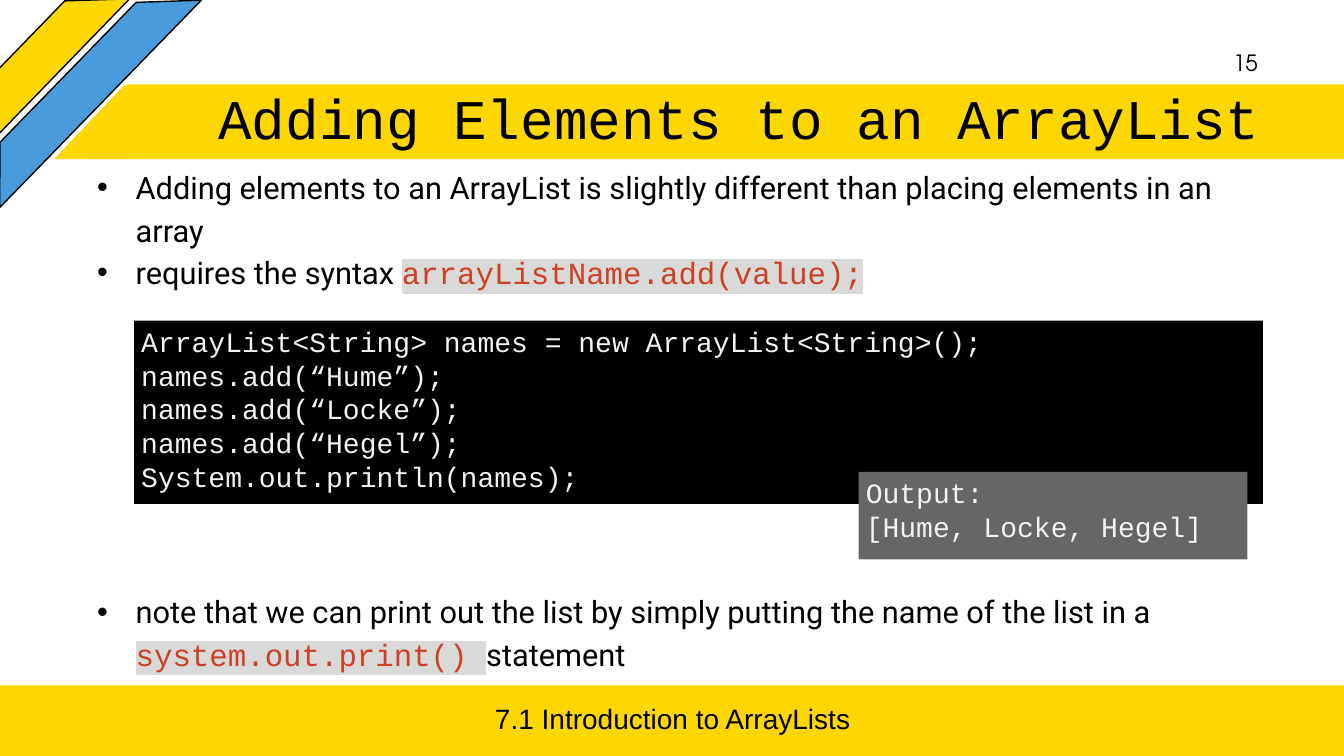
from lxml.etree import SubElement
from pptx import Presentation
from pptx.dml.color import RGBColor
from pptx.enum.shapes import MSO_SHAPE as Preset
from pptx.enum.text import MSO_ANCHOR as Anchor, MSO_AUTO_SIZE as AutoSize, PP_ALIGN as Align
from pptx.oxml.ns import qn
from pptx.util import Cm, Pt

BLACK, WHITE_TEXT = "000000", "F3F3F3"
YELLOW, BLUE = "FFD700", "4A9BDC"
CODE_RED, CODE_BACK, OUTPUT_GREY = "CC4125", "D9D9D9", "666666"
MONO, BODY = "Courier New", "Roboto"

CODE = """ArrayList<String> names = new ArrayList<String>();
names.add(“Hume”);
names.add(“Locke”);
names.add(“Hegel”);
System.out.println(names);"""
OUTPUT = """Output:
[Hume, Locke, Hegel]"""

# Each bullet: space before in points, then (text, is code) pieces
BULLETS = [
    (0, [("Adding elements to an ArrayList is slightly different than "
          "placing elements in an array", False)]),
    (0, [("requires the syntax ", False), ("arrayListName.add(value);", True)]),
    (212, [("note that we can print out the list by simply putting the name "
            "of the list in a ", False),
           ("system.out.print() ", True), ("statement", False)]),
]


def rgb(color):
    return RGBColor.from_string(color)


def set_font(font, name, size, color):
    font.name, font.size = name, Pt(size)
    font.color.rgb = rgb(color)


def add_block(page, preset, place, fill, line=None, adjust=None, turn=0, flip=False):
    block = page.shapes.add_shape(preset, *map(Cm, place))
    block.shadow.inherit = False
    block.fill.solid()
    block.fill.fore_color.rgb = rgb(fill)
    if line:
        block.line.color.rgb = rgb(line)
        block.line.width = Pt(1)
    else:
        block.line.fill.background()
    if adjust is not None:
        block.adjustments[0] = adjust
    block.rotation = turn
    if flip:
        block._element.spPr.find(qn("a:xfrm")).set("flipH", "1")
    return block


def add_label(page, place, text, align, name, size):
    box = page.shapes.add_textbox(*map(Cm, place))
    frame = box.text_frame
    frame.word_wrap = True
    frame.vertical_anchor = Anchor.MIDDLE
    para = frame.paragraphs[0]
    para.text, para.alignment = text, align
    set_font(para.font, name, size, BLACK)


def add_code(page, place, fill, code):
    frame = add_block(page, Preset.RECTANGLE, place, fill).text_frame
    frame.vertical_anchor = Anchor.TOP
    frame.margin_left = frame.margin_right = Cm(0.18)
    frame.margin_top = frame.margin_bottom = Cm(0.1)
    frame.text = code
    for para in frame.paragraphs:
        para.alignment = Align.LEFT
        set_font(para.font, MONO, 20, WHITE_TEXT)


def mark_as_code(span):
    span.font.color.rgb = rgb(CODE_RED)
    highlight = SubElement(span.font._element, qn("a:highlight"))
    SubElement(highlight, qn("a:srgbClr")).set("val", CODE_BACK)
    span.font.name = MONO


def add_bullet_mark(para):
    props = para._p.get_or_add_pPr()
    props.set("marL", str(Cm(1.27)))
    props.set("indent", str(Cm(-0.97)))
    color = SubElement(props, qn("a:buClr"))
    SubElement(color, qn("a:srgbClr")).set("val", BLACK)
    SubElement(props, qn("a:buFont")).set("typeface", "Arial")
    SubElement(props, qn("a:buChar")).set("char", "•")


def add_bullets(page, place, bullets):
    frame = page.shapes.add_textbox(*map(Cm, place)).text_frame
    frame.word_wrap = True
    for index, (space, pieces) in enumerate(bullets):
        para = frame.add_paragraph() if index else frame.paragraphs[0]
        add_bullet_mark(para)
        para.line_spacing, para.space_before = 1.15, Pt(space)
        set_font(para.font, BODY, 22, BLACK)
        for text, is_code in pieces:
            span = para.add_run()
            span.text = text
            if is_code:
                mark_as_code(span)


def place_title(page, place, text):
    title = page.shapes.title
    title.left, title.top, title.width, title.height = map(Cm, place)
    frame = title.text_frame
    frame.text = text
    frame.auto_size = AutoSize.NONE
    frame.vertical_anchor = Anchor.MIDDLE
    para = frame.paragraphs[0]
    para.alignment, para.line_spacing = Align.RIGHT, 0.9
    set_font(para.font, MONO, 40, BLACK)
    page.shapes._spTree.append(title._element)  # bring in front of the title bar


def main():
    deck = Presentation()
    deck.slide_width, deck.slide_height = Cm(33.87), Cm(19.05)
    page = deck.slides.add_slide(deck.slide_layouts[5])

    add_block(page, Preset.RECTANGLE, (0, 17.27, 33.87, 1.78), YELLOW)
    add_block(page, Preset.TRAPEZOID, (-1.17, 0.71, 4.75, 1.14), YELLOW, BLACK, 1.03, 314.1)
    add_block(page, Preset.TRAPEZOID, (-1.52, 1.65, 7.29, 1.14), BLUE, BLACK, 1.04, 314.2)
    add_label(page, (0.56, 17.6, 32.79, 1.02), "7.1 Introduction to ArrayLists",
              Align.CENTER, "Arial", 20)
    add_block(page, Preset.SNIP_1_RECTANGLE, (2.26, 2.13, 31.61, 1.88), YELLOW,
              adjust=0.5, flip=True)
    add_block(page, Preset.RIGHT_TRIANGLE, (1.37, 2.13, 1.78, 1.88), YELLOW, flip=True)

    place_title(page, (3.53, 2.13, 28.45, 1.88), "Adding Elements to an ArrayList")
    add_bullets(page, (1.9, 3.99, 30.05, 13.28), BULLETS)
    add_label(page, (24.33, 1.07, 7.62, 1.02), "15", Align.RIGHT, "TeX Gyre Adventor", 16)
    add_code(page, (3.38, 8.08, 28.45, 4.62), BLACK, CODE)
    add_code(page, (21.64, 11.89, 9.8, 2.21), OUTPUT_GREY, OUTPUT)
    deck.save("out.pptx")


if __name__ == "__main__":
    main()
